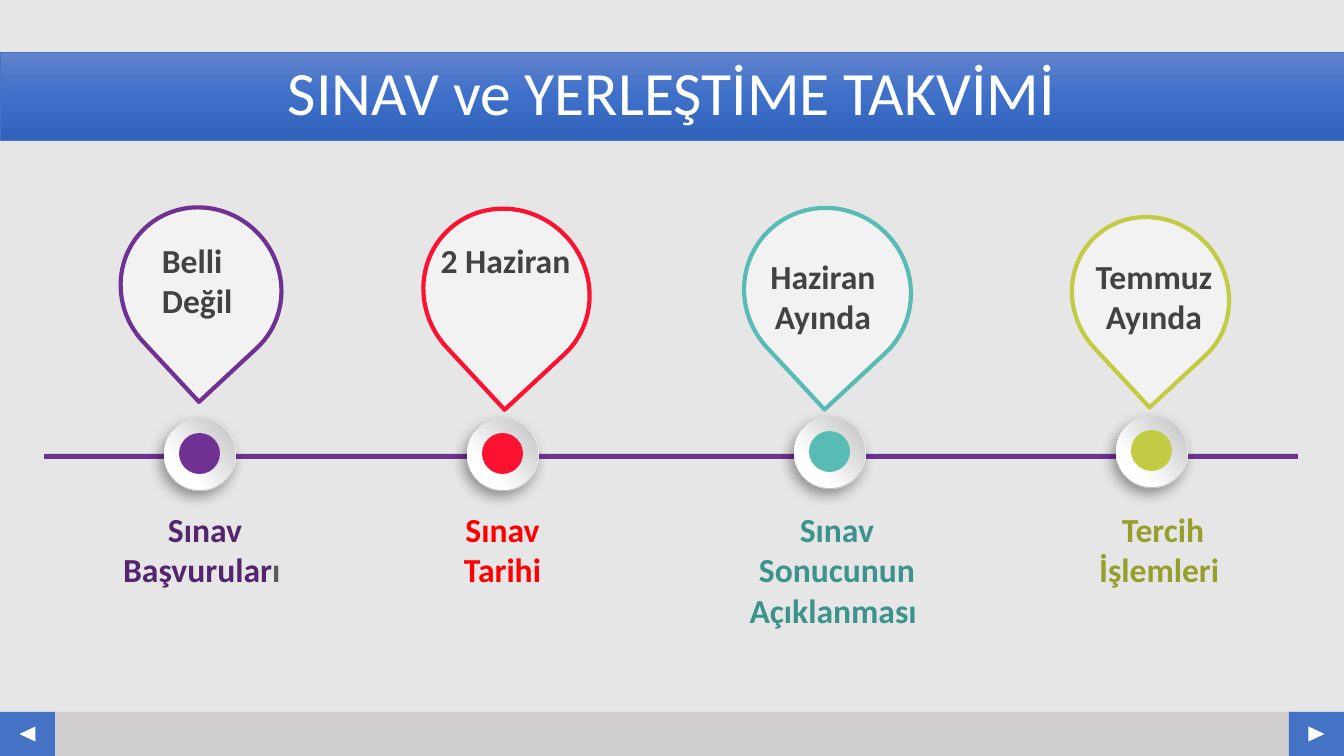
import lxml.etree
import pptx
import pptx.dml.color
import pptx.enum.shapes
import pptx.enum.text
import pptx.oxml.ns
import pptx.util

RGB = pptx.dml.color.RGBColor
SHAPES = pptx.enum.shapes.MSO_SHAPE
ALIGN = pptx.enum.text.PP_ALIGN
ANCHOR = pptx.enum.text.MSO_ANCHOR
FIT = pptx.enum.text.MSO_AUTO_SIZE
qn = pptx.oxml.ns.qn

BACKDROP = RGB(0xE7, 0xE6, 0xE6)
FOOTER = RGB(0xD0, 0xCE, 0xCE)
BLUE = RGB(0x44, 0x72, 0xC4)
BANNER_TOP = RGB(0x61, 0x83, 0xCB)
BANNER_MIDDLE = RGB(0x3E, 0x70, 0xCA)
BANNER_BOTTOM = RGB(0x30, 0x62, 0xBB)
WHITE = RGB(0xFF, 0xFF, 0xFF)
SILVER = RGB(0xBF, 0xBF, 0xBF)
STEEL = RGB(0xB8, 0xB8, 0xB8)
PALE = RGB(0xF2, 0xF2, 0xF2)
CHARCOAL = RGB(0x42, 0x42, 0x42)
GREY = RGB(0x59, 0x59, 0x59)
PURPLE = RGB(0x6F, 0x32, 0x93)
DARK_PURPLE = RGB(0x53, 0x25, 0x6E)
CRIMSON = RGB(0xFA, 0x12, 0x30)
RED = RGB(0xFF, 0x00, 0x00)
TEAL = RGB(0x58, 0xBB, 0xB4)
DARK_TEAL = RGB(0x3C, 0x93, 0x8C)
LIME = RGB(0xC2, 0xCB, 0x44)
OLIVE = RGB(0x97, 0x9F, 0x2C)

WIDTH, HEIGHT = 1344, 756
EMU_PER_PX = 914400 / 100.8


def px(length):
    """Turn whole pixels into EMU."""
    return pptx.util.Emu(round(length * EMU_PER_PX))


class TimelineSlide:
    """Holds the text style and the slide being built."""

    text_format = {"name": "Calibri", "size": pptx.util.Pt(24), "bold": True}

    def __init__(self, deck):
        """Add a title-only slide with a plain background."""
        self.slide = deck.slides.add_slide(deck.slide_layouts[5])
        self.slide.background.fill.solid()
        self.slide.background.fill.fore_color.rgb = BACKDROP

    def gradient(self, shape, stops, angle):
        """Fill a shape with colour stops along a clockwise angle."""
        shape.fill.gradient()
        shape.fill.gradient_angle = 360 - angle
        stop_list = shape._element.spPr.find(".//" + qn("a:gsLst"))
        stop_list.clear()
        for percent, color in stops:
            stop = lxml.etree.SubElement(stop_list, qn("a:gs"), pos=str(percent * 1000))
            lxml.etree.SubElement(stop, qn("a:srgbClr"), val=str(color))

    def shape(self, kind, box, fill=None, outline=None, rotation=0):
        """Add a flat preset shape."""
        part = self.slide.shapes.add_shape(kind, *map(px, box))
        part.shadow.inherit = False
        part.rotation = rotation
        if fill is not None:
            part.fill.solid()
            part.fill.fore_color.rgb = fill
        if outline is None:
            part.line.fill.background()
        else:
            part.line.color.rgb = outline
            part.line.width = pptx.util.Pt(3)
        return part

    def drop_shadow(self, shape):
        """Cast a soft shadow to the lower left."""
        effects = shape._element.spPr.find(qn("a:effectLst"))
        shadow = lxml.etree.SubElement(
            effects, qn("a:outerShdw"), blurRad="127000", dist="63500",
            dir=str(123 * 60000), algn="ctr", rotWithShape="0")
        color = lxml.etree.SubElement(shadow, qn("a:srgbClr"), val="000000")
        lxml.etree.SubElement(color, qn("a:alpha"), val="39000")

    def run(self, paragraph, wording, color, **changes):
        """Add one formatted run."""
        run = paragraph.add_run()
        run.text = wording
        for name, value in {**self.text_format, **changes}.items():
            setattr(run.font, name, value)
        run.font.color.rgb = color

    def text(self, box, paragraphs, align=ALIGN.CENTER, wrap=True):
        """Add a text box from paragraphs of (wording, colour, changes) runs."""
        frame = self.slide.shapes.add_textbox(*map(px, box)).text_frame
        frame.word_wrap = wrap
        frame.auto_size = FIT.SHAPE_TO_FIT_TEXT
        for index, runs in enumerate(paragraphs):
            paragraph = frame.add_paragraph() if index else frame.paragraphs[0]
            paragraph.alignment = align
            for wording, color, changes in runs:
                self.run(paragraph, wording, color, **changes)

    def title(self, box, wording):
        """Move and format the title placeholder as a banner."""
        banner = self.slide.shapes.title
        banner.left, banner.top, banner.width, banner.height = map(px, box)
        self.gradient(banner, [(0, BANNER_TOP), (50, BANNER_MIDDLE), (100, BANNER_BOTTOM)], 90)
        banner.line.color.rgb = BLUE
        banner.line.width = pptx.util.Pt(0.5)
        frame_format = {"word_wrap": True, "auto_size": FIT.NONE, "vertical_anchor": ANCHOR.MIDDLE}
        for name, value in frame_format.items():
            setattr(banner.text_frame, name, value)
        heading = banner.text_frame.paragraphs[0]
        heading.alignment = ALIGN.CENTER
        heading.line_spacing = 0.9
        self.run(heading, wording, WHITE, size=pptx.util.Pt(44), bold=False)

    def footer(self):
        """Add the bottom bar with an arrow at each end."""
        top, height, button = 712, 44, 55
        self.shape(SHAPES.RECTANGLE, (0, top, WIDTH, height), FOOTER)
        for left, rotation in ((0, 270), (WIDTH - button, 90)):
            self.shape(SHAPES.RECTANGLE, (left, top, button, height), BLUE)
            self.shape(SHAPES.ISOSCELES_TRIANGLE, (left + 20, top + 14, 15, 16), WHITE, rotation=rotation)

    def milestone(self, left, top, color):
        """Add a raised ring with a coloured dot."""
        rim = self.shape(SHAPES.OVAL, (left, top, 72, 72), rotation=62.3)
        self.gradient(rim, [(17, WHITE), (88, STEEL)], 45)
        self.drop_shadow(rim)
        face = self.shape(SHAPES.OVAL, (left, top, 71, 71), rotation=273)
        self.gradient(face, [(29, WHITE), (98, SILVER)], 45)
        self.shape(SHAPES.OVAL, (left + 15, top + 14, 41, 41), color)

    def pin(self, box, color, date_box, date_lines, align):
        """Add a map pin with its date."""
        self.shape(SHAPES.TEAR, box, PALE, color, 137.1)
        self.text(date_box, [[(line, CHARCOAL, {})] for line in date_lines], align, wrap=False)


def main():
    """Build the exam calendar slide."""
    deck = pptx.Presentation()
    deck.slide_width, deck.slide_height = px(WIDTH), px(HEIGHT)
    calendar = TimelineSlide(deck)
    calendar.footer()
    calendar.title((0, 52, WIDTH, 88), "SINAV ve YERLEŞTİME TAKVİMİ")
    calendar.shape(SHAPES.RECTANGLE, (44, 454, 1254, 5), PURPLE)

    rings = [(164, 419, PURPLE), (467, 419, CRIMSON), (794, 417, TEAL), (1116, 416, LIME)]
    for ring in rings:
        calendar.milestone(*ring)

    pins = [
        ((122, 206, 158, 164), PURPLE, (152, 235, 92, 92), ["Belli", "Değil"], ALIGN.LEFT),
        ((425, 207, 163, 170), CRIMSON, (430, 235, 151, 50), ["2 Haziran"], ALIGN.CENTER),
        ((745, 207, 165, 169), TEAL, (752, 251, 142, 132), ["Haziran", "Ayında"], ALIGN.CENTER),
        ((1074, 215, 153, 162), LIME, (1085, 251, 138, 92), ["Temmuz", "Ayında"], ALIGN.CENTER),
    ]
    for pin in pins:
        calendar.pin(*pin)

    small = {"size": pptx.util.Pt(20), "bold": False}
    stages = [
        (109, 192, 92, [("Sınav Başvurular", DARK_PURPLE, {}), ("ı", GREY, {}), (" ", GREY, small)]),
        (418, 169, 92, [("Sınav Tarihi", RED, {})]),
        (728, 218, 132, [("Sınav Sonucunun Açıklanması ", DARK_TEAL, {})]),
        (1085, 156, 92, [("Tercih İşlemleri ", OLIVE, {})]),
    ]
    for left, width, height, stage in stages:
        calendar.text((left, 504, width, height), [stage])

    deck.save("out.pptx")


if __name__ == "__main__":
    main()
